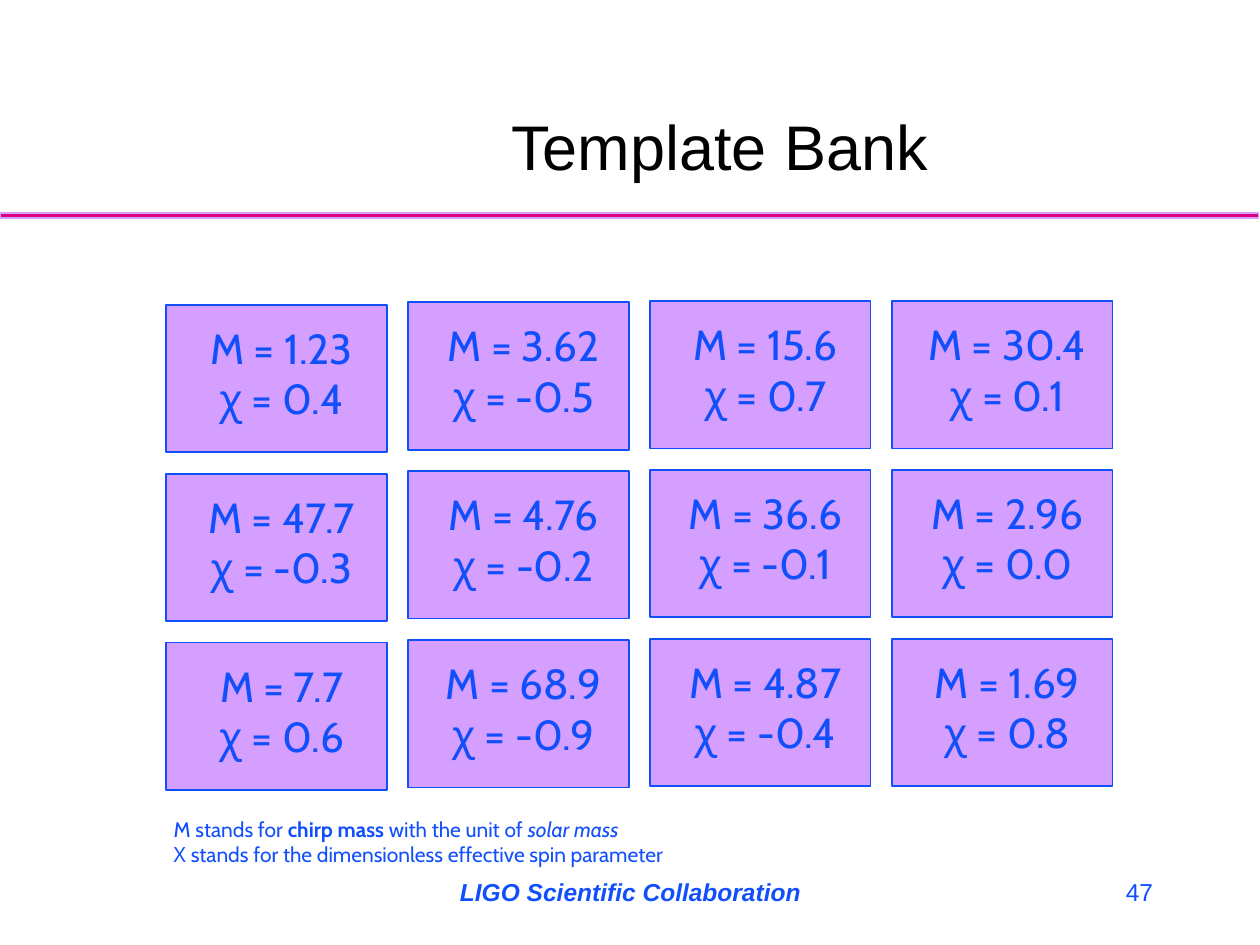
"""Build the Template Bank slide: a grid of waveform parameter cards."""
from dataclasses import dataclass

from pptx import Presentation
from pptx.dml.color import RGBColor
from pptx.enum.shapes import MSO_SHAPE
from pptx.enum.text import MSO_ANCHOR, PP_ALIGN
from pptx.util import Inches, Pt

RECT = MSO_SHAPE.RECTANGLE
TOP, MIDDLE, BOTTOM = MSO_ANCHOR.TOP, MSO_ANCHOR.MIDDLE, MSO_ANCHOR.BOTTOM
LEFT, CENTER, RIGHT = PP_ALIGN.LEFT, PP_ALIGN.CENTER, PP_ALIGN.RIGHT


@dataclass(frozen=True)
class Theme:
    """Colours, fonts and type sizes."""
    ink: str = "000000"
    blue: str = "114FFB"
    lilac: str = "D49FFF"
    pink: str = "DC0081"
    plain: str = "Arial"
    round: str = "Cabin"
    title: int = 36
    card: int = 24
    foot: int = 14
    note: int = 12


@dataclass(frozen=True)
class Grid:
    """Card grid in inches, with the rise of each column."""
    left: float = 1.32
    top: float = 2.42
    across: float = 1.92
    down: float = 1.34
    wide: float = 1.75
    high: float = 1.17
    rise: tuple = (0, 0.02, 0.03, 0.03)

    def spot(self, row, col):
        """Return the left and top of a cell."""
        return (self.left + col * self.across,
                self.top + row * self.down - self.rise[col])


THEME = Theme()
GRID = Grid()
WIDE, HIGH = 10, 7.5
FOOT = 6.83
BANK = (
    (("1.23", "0.4"), ("3.62", "-0.5"), ("15.6", "0.7"), ("30.4", "0.1")),
    (("47.7", "-0.3"), ("4.76", "-0.2"), ("36.6", "-0.1"), ("2.96", "0.0")),
    (("7.7", "0.6"), ("68.9", "-0.9"), ("4.87", "-0.4"), ("1.69", "0.8")),
)
NOTE = (
    (("M stands for ", ""), ("chirp mass ", "b"),
     ("with the unit of ", ""), ("solar mass", "i")),
    (("Χ stands for the dimensionless effective spin parameter", ""),),
)


def add_box(shapes, area, fill, line, weight):
    """Add a filled, outlined rectangle."""
    box = shapes.add_shape(RECT, *map(Inches, area))
    box.shadow.inherit = False
    box.fill.solid()
    box.fill.fore_color.rgb = RGBColor.from_string(fill)
    box.line.color.rgb = RGBColor.from_string(line)
    box.line.width = Pt(weight)


def add_text(shapes, area, lines, size, font, color=THEME.blue,
             align=CENTER, anchor=TOP):
    """Add a text box from lines of (words, style) runs."""
    frame = shapes.add_textbox(*map(Inches, area)).text_frame
    frame.word_wrap = True
    frame.vertical_anchor = anchor
    for index, line in enumerate(lines):
        para = frame.add_paragraph() if index else frame.paragraphs[0]
        para.alignment = align
        for words, style in line:
            run = para.add_run()
            run.text = words
            run.font.name = font
            run.font.size = Pt(size)
            run.font.bold = "b" in style
            run.font.italic = "i" in style
            run.font.color.rgb = RGBColor.from_string(color)


def add_card(shapes, row, col, mass, spin):
    """Add one grouped card with its mass and spin."""
    left, top = GRID.spot(row, col)
    group = shapes.add_group_shape().shapes
    add_box(group, (left, top, GRID.wide, GRID.high),
            THEME.lilac, THEME.blue, 1)
    lines = [[(f"M = {mass}", "")], [(f"χ = {spin}", "")]]
    add_text(group, (left, top + 0.09, 1.83, 1.31), lines,
             THEME.card, THEME.round)


def main():
    """Build and save the slide."""
    deck = Presentation()
    deck.slide_width, deck.slide_height = Inches(WIDE), Inches(HIGH)
    shapes = deck.slides.add_slide(deck.slide_layouts[6]).shapes
    add_box(shapes, (0, 1.69, WIDE - 0.01, 0.04),
            THEME.pink, THEME.lilac, 0.75)
    add_text(shapes, (1.75, 0.25, 7.92, 1.25), [[("Template Bank", "")]],
             THEME.title, THEME.plain, THEME.ink, anchor=BOTTOM)
    add_text(shapes, (3.42, FOOT, 3.17, 0.5),
             [[("LIGO Scientific Collaboration", "bi")]],
             THEME.foot, THEME.plain, anchor=MIDDLE)
    add_text(shapes, (7.17, FOOT, 2.08, 0.5), [[("47", "")]],
             THEME.foot, THEME.plain, align=RIGHT, anchor=MIDDLE)
    add_text(shapes, (1.28, 6.43, 4.18, 0.5), NOTE,
             THEME.note, THEME.round, align=LEFT)
    for row, cards in enumerate(BANK):
        for col, (mass, spin) in enumerate(cards):
            add_card(shapes, row, col, mass, spin)
    deck.save("out.pptx")


if __name__ == "__main__":
    main()
